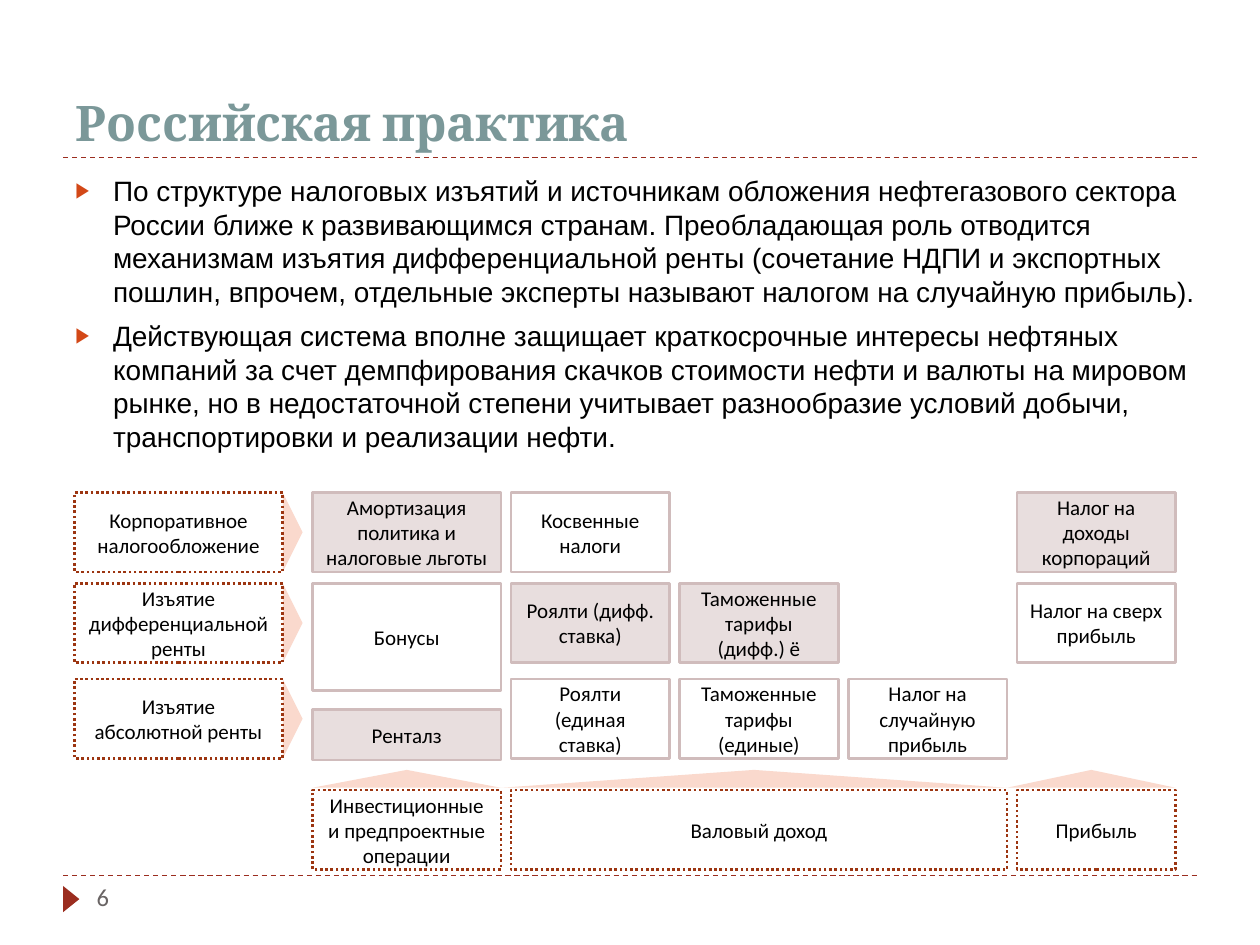
from dataclasses import dataclass

from lxml.etree import SubElement
from pptx import Presentation
from pptx.dml.color import RGBColor
from pptx.enum.dml import MSO_LINE
from pptx.enum.shapes import MSO_CONNECTOR, MSO_SHAPE
from pptx.enum.text import MSO_ANCHOR, PP_ALIGN
from pptx.oxml.ns import qn
from pptx.util import Cm, Pt


@dataclass(frozen=True)
class Theme:
    title: str = "7B9899"
    text: str = "000000"
    number: str = "696464"
    rule: str = "9B2D1F"
    bullet: str = "D34817"
    heading_line: str = "9C3511"
    tax_line: str = "D0BCBC"
    used: str = "E8DEDE"
    plain: str = "FFFFFF"
    arrow: str = "FAD9CD"
    title_font: str = "Cambria"
    body_font: str = "Arial"
    label_font: str = "Calibri"
    title_size: int = 28
    body_size: int = 16
    number_size: int = 14
    label_size: int = 12


class SlideBuilder:
    def __init__(self, slide, theme):
        self.shapes = slide.shapes
        self.theme = theme

    def style(self, paragraph, font, size, color, bold=False):
        for run in paragraph.runs:
            run.font.name = font
            run.font.size = Pt(size)
            run.font.bold = bold
            run.font.color.rgb = RGBColor.from_string(color)

    def rule(self, y):
        rule = self.shapes.add_connector(
            MSO_CONNECTOR.STRAIGHT, Cm(1.27), Cm(y), Cm(24.13), Cm(y))
        rule.line.color.rgb = RGBColor.from_string(self.theme.rule)
        rule.line.width = Pt(0.75)
        rule.line.dash_style = MSO_LINE.DASH
        SubElement(rule._element.spPr, qn("a:effectLst"))

    def text(self, content, x, y, w, h, font, size, color,
             bold=False, anchor=MSO_ANCHOR.TOP):
        frame = self.shapes.add_textbox(Cm(x), Cm(y), Cm(w), Cm(h)).text_frame
        frame.word_wrap = True
        frame.vertical_anchor = anchor
        frame.text = content
        for paragraph in frame.paragraphs:
            self.style(paragraph, font, size, color, bold)
        return frame

    def bullets(self, points, x, y, w, h):
        theme = self.theme
        frame = self.text("\n".join(points), x, y, w, h,
                          theme.body_font, theme.body_size, theme.text)
        for paragraph in frame.paragraphs:
            paragraph.space_before = Pt(6)
            properties = paragraph._p.get_or_add_pPr()
            properties.set("marL", str(Cm(0.76)))
            properties.set("indent", str(-Cm(0.76)))
            color = SubElement(properties, qn("a:buClr"))
            SubElement(color, qn("a:srgbClr"), val=theme.bullet)
            SubElement(properties, qn("a:buSzPct"), val="76000")
            SubElement(properties, qn("a:buFont"), typeface=theme.body_font)
            SubElement(properties, qn("a:buChar"), char="▶")

    def solid(self, kind, x, y, w, h, fill, rotation=0):
        solid = self.shapes.add_shape(kind, Cm(x), Cm(y), Cm(w), Cm(h))
        solid.shadow.inherit = False
        solid.fill.solid()
        solid.fill.fore_color.rgb = RGBColor.from_string(fill)
        solid.line.fill.background()
        solid.rotation = rotation
        return solid

    def arrow(self, x, y, w, h, up=False):
        if up:
            x, y, w, h = x + (w - h) / 2, y + (h - w) / 2, h, w
        arrow = self.solid(MSO_SHAPE.RIGHT_ARROW, x, y, w, h,
                           self.theme.arrow, 270 if up else 0)
        arrow.adjustments[0] = 1
        arrow.adjustments[1] = 1.27

    def box(self, label, x, y, w, h, fill, line, dash=None):
        box = self.solid(MSO_SHAPE.RECTANGLE, x, y, w, h, fill)
        box.line.color.rgb = RGBColor.from_string(line)
        box.line.width = Pt(1.5)
        if dash:
            box.line.dash_style = dash
        frame = box.text_frame
        frame.word_wrap = True
        frame.vertical_anchor = MSO_ANCHOR.MIDDLE
        frame.text = label
        paragraph = frame.paragraphs[0]
        paragraph.alignment = PP_ALIGN.CENTER
        self.style(paragraph, self.theme.label_font, self.theme.label_size, self.theme.text)

    def heading(self, label, x, y, w, h):
        self.box(label, x, y, w, h, self.theme.plain,
                 self.theme.heading_line, MSO_LINE.ROUND_DOT)

    def tax(self, label, x, y, w, h, used):
        fill = self.theme.used if used else self.theme.plain
        self.box(label, x, y, w, h, fill, self.theme.tax_line)


def main():
    presentation = Presentation()
    presentation.slide_width, presentation.slide_height = Cm(25.4), Cm(19.05)
    theme = Theme()
    builder = SlideBuilder(
        presentation.slides.add_slide(presentation.slide_layouts[6]), theme)

    for y in (17.65, 3.18):
        builder.rule(y)
    builder.solid(MSO_SHAPE.ISOSCELES_TRIANGLE, 1.17, 17.96, 0.53, 0.33, theme.rule, 90)
    builder.text("Российская практика", 1.27, 0.43, 22.86, 2.75, theme.title_font,
                 theme.title_size, theme.title, True, MSO_ANCHOR.BOTTOM)
    builder.bullets([
        "По структуре налоговых изъятий и источникам обложения нефтегазового сектора "
        "России ближе к развивающимся странам. Преобладающая роль отводится механизмам "
        "изъятия дифференциальной ренты (сочетание НДПИ и экспортных пошлин, впрочем, "
        "отдельные эксперты называют налогом на случайную прибыль).",
        "Действующая система вполне защищает краткосрочные интересы нефтяных компаний "
        "за счет демпфирования скачков стоимости нефти и валюты на мировом рынке, но в "
        "недостаточной степени учитывает разнообразие условий добычи, транспортировки "
        "и реализации нефти.",
    ], 1.27, 3.38, 23.24, 13.72)
    builder.text("6", 1.7, 17.65, 5.51, 1.02,
                 theme.label_font, theme.number_size, theme.number)

    row_height, tax_width, gap = 1.6, 3.2, 0.2
    group_x, group_width = 1.5, 4.2
    early_x, early_width = 6.3, 3.8
    corporate, differential, absolute, stage_y = 9.93, 11.76, 13.69, 15.93
    columns = [10.3 + i * (tax_width + gap) for i in range(4)]

    groups = [
        ("Корпоративное налогообложение", corporate),
        ("Изъятие дифференциальной ренты", differential),
        ("Изъятие абсолютной ренты", absolute),
    ]
    for label, y in groups:
        builder.arrow(group_x + group_width, y, 0.4, row_height)
        builder.heading(label, group_x, y, group_width, row_height)

    stages = [
        ("Инвестиционные и предпроектные операции", early_x, early_width, 0),
        ("Валовый доход", columns[0], 3 * tax_width + 2 * gap, gap),
        ("Прибыль", columns[3], tax_width, gap),
    ]
    for label, x, width, lead in stages:
        builder.arrow(x - lead, stage_y - 0.41, width + lead, 0.36, up=True)
        builder.heading(label, x, stage_y, width, row_height)

    early_taxes = [
        ("Амортизация политика и налоговые льготы", corporate, row_height, True),
        ("Бонусы", differential, 2.16, False),
        ("Ренталз", 14.3, 1.02, True),
    ]
    for label, y, height, used in early_taxes:
        builder.tax(label, early_x, y, early_width, height, used)

    taxes = [
        ("Косвенные налоги", 0, corporate, False),
        ("Налог на доходы корпораций", 3, corporate, True),
        ("Роялти (дифф. ставка)", 0, differential, True),
        ("Таможенные тарифы (дифф.) ё", 1, differential, True),
        ("Налог на сверх прибыль", 3, differential, False),
        ("Роялти (единая ставка)", 0, absolute, False),
        ("Таможенные тарифы (единые)", 1, absolute, False),
        ("Налог на случайную прибыль", 2, absolute, False),
    ]
    for label, column, y, used in taxes:
        builder.tax(label, columns[column], y, tax_width, row_height, used)

    presentation.save("out.pptx")


if __name__ == "__main__":
    main()
